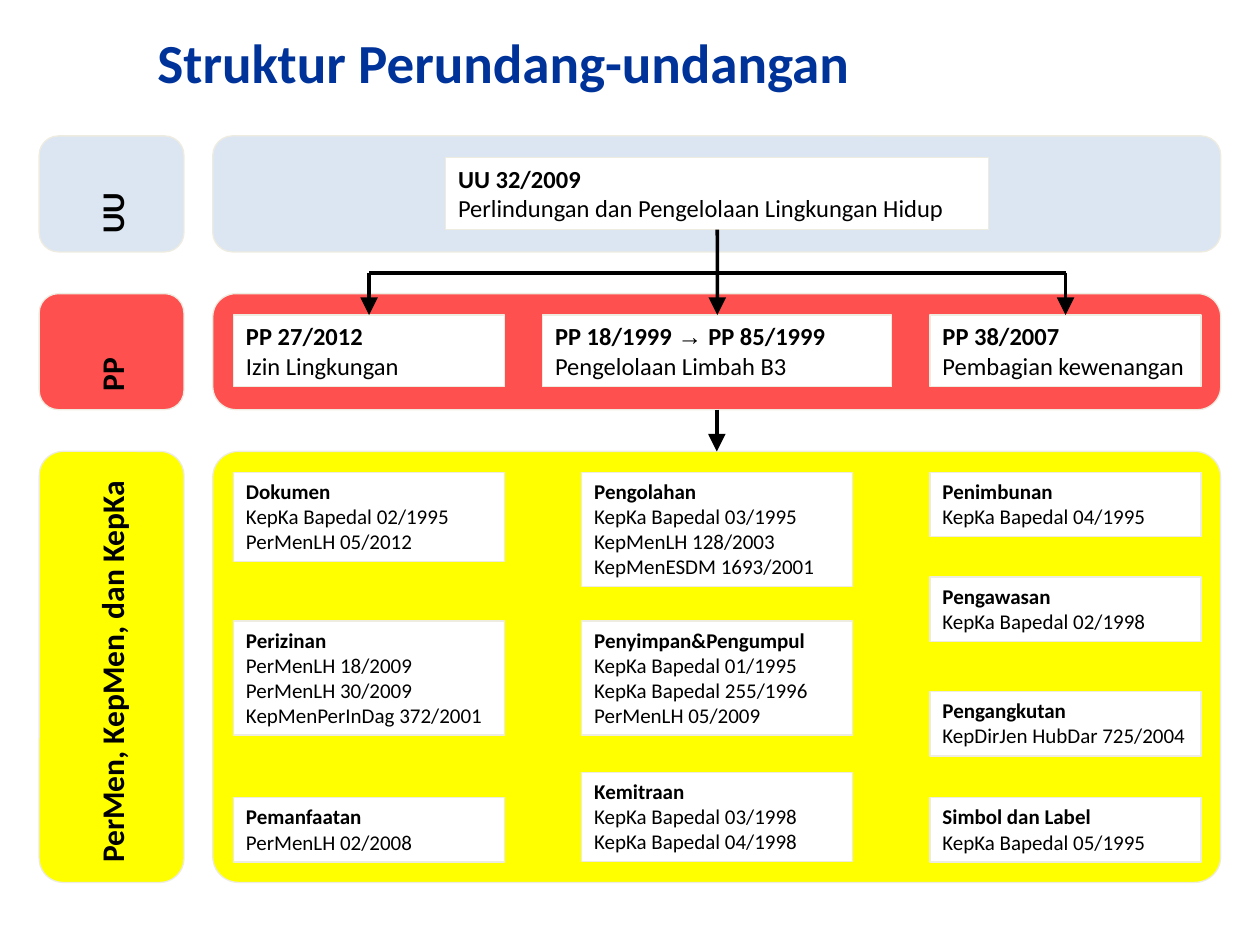
from dataclasses import dataclass
from pptx import Presentation
from pptx.dml.color import RGBColor as Rgb
from pptx.enum.shapes import MSO_CONNECTOR as Link, MSO_SHAPE as Form
from pptx.enum.text import MSO_ANCHOR as Anchor, MSO_AUTO_SIZE as Fit, PP_ALIGN as Align
from pptx.oxml.ns import qn
from pptx.util import Cm, Pt
from lxml.etree import SubElement


@dataclass(frozen=True)
class Theme:
    font: str = "Calibri"
    sign: str = "Times New Roman"
    title: str = "003399"
    ink: str = "000000"
    card: str = "FFFFFF"
    edge: str = "EEECE1"
    blue: str = "DCE6F2"
    red: str = "FF5050"
    gold: str = "FFFF00"
    head: float = 31.5
    label: float = 18
    law: float = 14
    rule: float = 12


T = Theme()
MID = 14.46
COLS = [MID - 7.02, MID, MID + 7.02]
WIDE = 5.46
BAR = 5.5

# label, colour, top, height, corner of the wide band
LEVELS = [
    ("UU", T.blue, 2.74, 2.34, 0.17),
    ("PP", T.red, 5.92, 2.34, 0.2),
    ("PerMen, KepMen, dan KepKa", T.gold, 9.1, 8.69, 0.06),
]
ACT = ["UU 32/2009", "Perlindungan dan Pengelolaan Lingkungan Hidup"]
LAWS = [
    (WIDE, ["PP 27/2012", "Izin Lingkungan"]),
    (7.04, ["PP 18/1999 → PP 85/1999", "Pengelolaan Limbah B3"]),
    (WIDE, ["PP 38/2007", "Pembagian kewenangan"]),
]
# one list of (top, lines) for each column
RULES = [
    [
        (9.52, ["Dokumen", "KepKa Bapedal 02/1995", "PerMenLH 05/2012"]),
        (12.52, ["Perizinan", "PerMenLH 18/2009", "PerMenLH 30/2009",
                 "KepMenPerInDag 372/2001"]),
        (16.08, ["Pemanfaatan", "PerMenLH 02/2008"]),
    ],
    [
        (9.52, ["Pengolahan", "KepKa Bapedal 03/1995", "KepMenLH 128/2003",
                "KepMenESDM 1693/2001"]),
        (12.52, ["Penyimpan&Pengumpul", "KepKa Bapedal 01/1995",
                 "KepKa Bapedal 255/1996", "PerMenLH 05/2009"]),
        (15.57, ["Kemitraan", "KepKa Bapedal 03/1998", "KepKa Bapedal 04/1998"]),
    ],
    [
        (9.52, ["Penimbunan", "KepKa Bapedal 04/1995"]),
        (11.63, ["Pengawasan", "KepKa Bapedal 02/1998"]),
        (13.94, ["Pengangkutan", "KepDirJen HubDar 725/2004"]),
        (16.08, ["Simbol dan Label", "KepKa Bapedal 05/1995"]),
    ],
]


def style(run, size, bold=True, color=T.ink):
    font = run.font
    font.name, font.size, font.bold = T.font, Pt(size), bold
    font.color.rgb = Rgb.from_string(color)


def add_box(slide, form, left, top, width, height, fill):
    box = slide.shapes.add_shape(form, Cm(left), Cm(top), Cm(width), Cm(height))
    box.shadow.inherit = False
    box.fill.solid()
    box.fill.fore_color.rgb = Rgb.from_string(fill)
    box.line.color.rgb = Rgb.from_string(T.edge)
    box.line.width = Pt(0.75)
    return box


def add_label(slide, text, fill, top, height):
    """Add a rounded box whose text reads upwards."""
    box = add_box(slide, Form.ROUNDED_RECTANGLE, 0.79, top, 2.92, height, fill)
    frame = box.text_frame
    frame.text = text
    frame.vertical_anchor = Anchor.MIDDLE
    frame._txBody.bodyPr.set("vert", "vert270")
    line = frame.paragraphs[0]
    line.alignment = Align.LEFT
    style(line.runs[0], T.label)


def add_band(slide, fill, top, height, corner):
    box = add_box(slide, Form.ROUNDED_RECTANGLE, 4.29, top, 20.32, height, fill)
    box.adjustments[0] = corner
    return box


def add_card(slide, mid, top, width, height, lines, size):
    """Add a white box centred on mid, with its first line in bold."""
    box = add_box(slide, Form.RECTANGLE, mid - width / 2, top, width, height, T.card)
    frame = box.text_frame
    frame.text = "\n".join(lines)
    frame.word_wrap = True
    frame.vertical_anchor = Anchor.TOP
    frame.auto_size = Fit.SHAPE_TO_FIT_TEXT
    for row, line in enumerate(frame.paragraphs):
        line.alignment = Align.LEFT
        left, sign, right = line.text.partition("→ ")
        line.runs[0].text = left
        for part in filter(None, (sign, right)):
            line.add_run().text = part
        for run in line.runs:
            style(run, size, bold=row == 0)
            if run.text == "→ ":
                run.font.name = T.sign
    return box


def add_line(slide, x1, y1, x2, y2, start=None, end=None, arrow=True):
    """Draw a line, joined to the bottom of start and the top of end."""
    line = slide.shapes.add_connector(Link.STRAIGHT, Cm(x1), Cm(y1), Cm(x2), Cm(y2))
    line.line.color.rgb = Rgb.from_string(T.ink)
    line.line.width = Pt(2)
    if arrow:
        SubElement(line.line._get_or_add_ln(), qn("a:tailEnd"),
                   type="triangle", w="lg", len="lg")
    SubElement(line._element.spPr, qn("a:effectLst"))
    if start is not None:
        line.begin_connect(start, 2)
    if end is not None:
        line.end_connect(end, 0)


def set_title(slide, text):
    title = slide.shapes.title
    title.left, title.top, title.width, title.height = Cm(2.92), Cm(0.64), Cm(22.48), Cm(1.27)
    frame = title.text_frame
    frame.text = text
    frame.auto_size = Fit.NONE
    frame.vertical_anchor = Anchor.BOTTOM
    frame.margin_bottom = 0
    line = frame.paragraphs[0]
    line.alignment = Align.LEFT
    style(line.runs[0], T.head, color=T.title)


def main():
    deck = Presentation()
    deck.slide_width, deck.slide_height = Cm(25.4), Cm(19.05)
    slide = deck.slides.add_slide(deck.slide_layouts[5])
    set_title(slide, "Struktur Perundang-undangan")

    bands = []
    for text, fill, top, height, corner in LEVELS:
        add_label(slide, text, fill, top, height)
        bands.append(add_band(slide, fill, top, height, corner))

    act = add_card(slide, MID, 3.18, 10.95, 1.45, ACT, T.law)
    laws = [add_card(slide, mid, 6.35, width, 1.45, lines, T.law)
            for mid, (width, lines) in zip(COLS, LAWS)]
    for mid, cards in zip(COLS, RULES):
        for top, lines in cards:
            add_card(slide, mid, top, WIDE, 0.3 + 0.5 * len(lines), lines, T.rule)

    add_line(slide, MID, 4.63, MID, 6.35, act, laws[1])
    add_line(slide, COLS[0], BAR, COLS[2], BAR, arrow=False)
    for col in (0, 2):
        add_line(slide, COLS[col], BAR, COLS[col], 6.35, end=laws[col])
    add_line(slide, MID, 8.26, MID, 9.1, bands[1], bands[2])

    deck.save("out.pptx")


if __name__ == "__main__":
    main()
